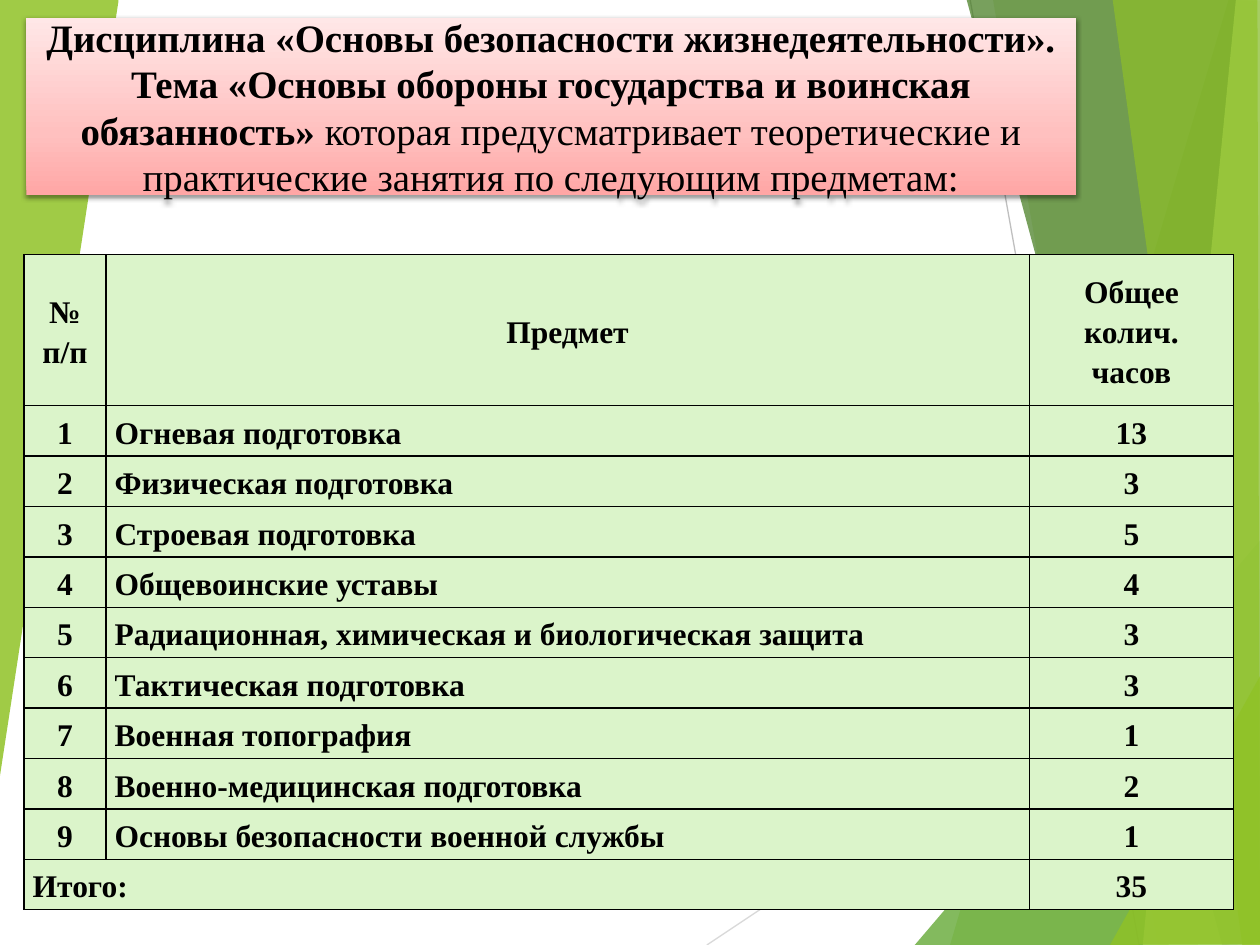
from copy import deepcopy
from dataclasses import dataclass

from pptx import Presentation
from pptx.dml.color import RGBColor
from pptx.enum.shapes import MSO_CONNECTOR, MSO_SHAPE
from pptx.enum.text import MSO_ANCHOR, PP_ALIGN
from pptx.oxml import parse_xml
from pptx.oxml.ns import nsdecls, qn
from pptx.util import Inches, Pt


@dataclass(frozen=True)
class Theme:
    font: str = "Times New Roman"
    text: str = "000000"
    border: str = "000000"
    cell: str = "DBF4CA"
    title_stops: tuple = ((0, "FFA6A5"), (0.35, "FFC0BF"), (1, "FFE7E7"))
    title_size: float = 22.2
    table_size: float = 18


@dataclass(frozen=True)
class Ray:
    start: tuple
    end: tuple
    color: str


@dataclass(frozen=True)
class Facet:
    points: tuple
    color: str
    opacity: int


THEME = Theme()

RAYS = (
    Ray((5.61, 7.5), (10.01, 4.57), "D9D9D9"),
    Ray((7.7, 0), (9.04, 7.5), "BFBFBF"),
)
FACETS = (
    Facet(((9.75, 0), (7.54, 7.5), (10.02, 7.51), (10.01, 0.01)), "90C226", 30),
    Facet(((7.88, -0.01), (9.19, 7.5), (10.01, 7.5), (10.01, -0.01)), "90C226", 20),
    Facet(((7.26, 7.5), (10, 4.29), (10.01, 7.5)), "54A021", 72),
    Facet(((7.67, -0.01), (9.7, 7.5), (10.01, 7.49), (10.01, -0.01)), "3F7819", 70),
    Facet(((9.81, -0.01), (9.07, 7.5), (10.01, 7.5), (10, -0.01)), "C0E474", 70),
    Facet(((8.83, -0.01), (9.86, 7.5), (10, 7.5), (9.98, -0.01)), "90C226", 65),
    Facet(((8.81, 7.5), (10.01, 5.35), (10.01, 7.49)), "90C226", 80),
    Facet(((-0.01, 0), (0.94, -0.01), (0.94, 0.01), (-0.01, 6.22)), "90C226", 85),
)

TITLE = (
    (("Дисциплина «Основы безопасности жизнедеятельности».", True),),
    (("Тема «Основы обороны государства и воинская обязанность» ", True),
     ("которая предусматривает теоретические и практические занятия "
      "по следующим предметам:", False)),
)

HEADER = ("№\nп/п", "Предмет", "Общее\nколич.\nчасов")
SUBJECTS = (
    ("Огневая подготовка", 13),
    ("Физическая подготовка", 3),
    ("Строевая подготовка", 5),
    ("Общевоинские уставы", 4),
    ("Радиационная, химическая и биологическая защита", 3),
    ("Тактическая подготовка", 3),
    ("Военная топография", 1),
    ("Военно-медицинская подготовка", 2),
    ("Основы безопасности военной службы", 1),
)
COL_WIDTHS = (0.65, 7.33, 1.62)
HEADER_HEIGHT, ROW_HEIGHT = 1.2, 0.4


def rgb(color: str) -> RGBColor:
    return RGBColor.from_string(color)


def set_attrs(obj, **values) -> None:
    for name, value in values.items():
        setattr(obj, name, value)


def style_font(font, size: float, bold: bool) -> None:
    set_attrs(font, name=THEME.font, size=Pt(size), bold=bold)
    font.color.rgb = rgb(THEME.text)


def add_ray(s, ray: Ray) -> None:
    line = s.shapes.add_connector(
        MSO_CONNECTOR.STRAIGHT, *map(Inches, ray.start + ray.end))
    line.line.color.rgb = rgb(ray.color)
    line.line.width = Pt(0.75)
    line._element.spPr.append(parse_xml(f"<a:effectLst {nsdecls('a')}/>"))


def add_facet(s, facet: Facet) -> None:
    first, *rest = [tuple(map(Inches, pt)) for pt in facet.points]
    builder = s.shapes.build_freeform(*first)
    builder.add_line_segments(rest, close=True)
    sp = builder.convert_to_shape()
    sp.shadow.inherit = False
    sp.line.fill.background()
    sp.fill.solid()
    sp.fill.fore_color.rgb = rgb(facet.color)
    clr = sp._element.spPr.find(qn("a:solidFill"))[0]
    clr.append(parse_xml(
        f'<a:alpha {nsdecls("a")} val="{facet.opacity * 1000}"/>'))


def fill_title(sp) -> None:
    """Give the title its three-stop upward gradient and soft shadow."""
    sp.fill.gradient()
    sp.fill.gradient_angle = 90
    stop_list = sp._element.spPr.find(f".//{qn('a:gsLst')}")
    stop_list.append(deepcopy(stop_list[0]))
    for stop, (position, color) in zip(sp.fill.gradient_stops, THEME.title_stops):
        stop.position = position
        stop.color.rgb = rgb(color)
    sp.line.fill.background()
    sp.shadow.inherit = False
    sp._element.spPr.find(qn("a:effectLst")).append(parse_xml(
        f'<a:outerShdw {nsdecls("a")} blurRad="{Pt(3.1)}" dist="{Pt(1.6)}" '
        'dir="5400000" rotWithShape="0"><a:srgbClr val="000000">'
        '<a:alpha val="38000"/></a:srgbClr></a:outerShdw>'))


def add_title(s) -> None:
    sp = s.shapes.add_shape(
        MSO_SHAPE.RECTANGLE, *map(Inches, (0.21, 0.14, 8.33, 1.41)))
    fill_title(sp)
    tf = sp.text_frame
    set_attrs(tf, word_wrap=True, vertical_anchor=MSO_ANCHOR.MIDDLE)
    for i, runs in enumerate(TITLE):
        p = tf.add_paragraph() if i else tf.paragraphs[0]
        p.alignment = PP_ALIGN.CENTER
        for text, bold in runs:
            r = p.add_run()
            r.text = text
            style_font(r.font, THEME.title_size, bold)


def style_cell(cell, align: PP_ALIGN) -> None:
    set_attrs(cell, vertical_anchor=MSO_ANCHOR.MIDDLE,
              margin_left=Inches(0.07), margin_right=Inches(0.07),
              margin_top=0, margin_bottom=0)
    tcPr = cell._tc.get_or_add_tcPr()
    for side in "LRTB":
        tcPr.append(parse_xml(
            f'<a:ln{side} {nsdecls("a")} w="{Pt(1)}"><a:solidFill>'
            f'<a:srgbClr val="{THEME.border}"/></a:solidFill></a:ln{side}>'))
    cell.fill.solid()
    cell.fill.fore_color.rgb = rgb(THEME.cell)
    for p in cell.text_frame.paragraphs:
        set_attrs(p, alignment=align, line_spacing=1.15)
        for r in p.runs:
            style_font(r.font, THEME.table_size, True)


def add_hours_table(s) -> None:
    total = sum(hours for _, hours in SUBJECTS)
    rows = [HEADER]
    rows += [(n, name, hours) for n, (name, hours) in enumerate(SUBJECTS, 1)]
    rows.append(("Итого:", "", total))
    heights = [HEADER_HEIGHT] + [ROW_HEIGHT] * (len(rows) - 1)
    table = s.shapes.add_table(
        len(rows), len(COL_WIDTHS), Inches(0.19), Inches(2.02),
        Inches(sum(COL_WIDTHS)), Inches(sum(heights))).table
    set_attrs(table, first_row=False, horz_banding=False)
    for col, width in zip(table.columns, COL_WIDTHS):
        col.width = Inches(width)
    last = len(rows) - 1
    for i, (values, height) in enumerate(zip(rows, heights)):
        table.rows[i].height = Inches(height)
        for j, value in enumerate(values):
            cell = table.cell(i, j)
            cell.text = str(value)
            left = (j == 1 and i > 0) or (j == 0 and i == last)
            style_cell(cell, PP_ALIGN.LEFT if left else PP_ALIGN.CENTER)
    table.cell(last, 0).merge(table.cell(last, 1))


def main() -> None:
    prs = Presentation()
    set_attrs(prs, slide_width=Inches(10), slide_height=Inches(7.5))
    s = prs.slides.add_slide(prs.slide_layouts[6])
    for ray in RAYS:
        add_ray(s, ray)
    for facet in FACETS:
        add_facet(s, facet)
    add_title(s)
    add_hours_table(s)
    prs.save("out.pptx")


if __name__ == "__main__":
    main()
